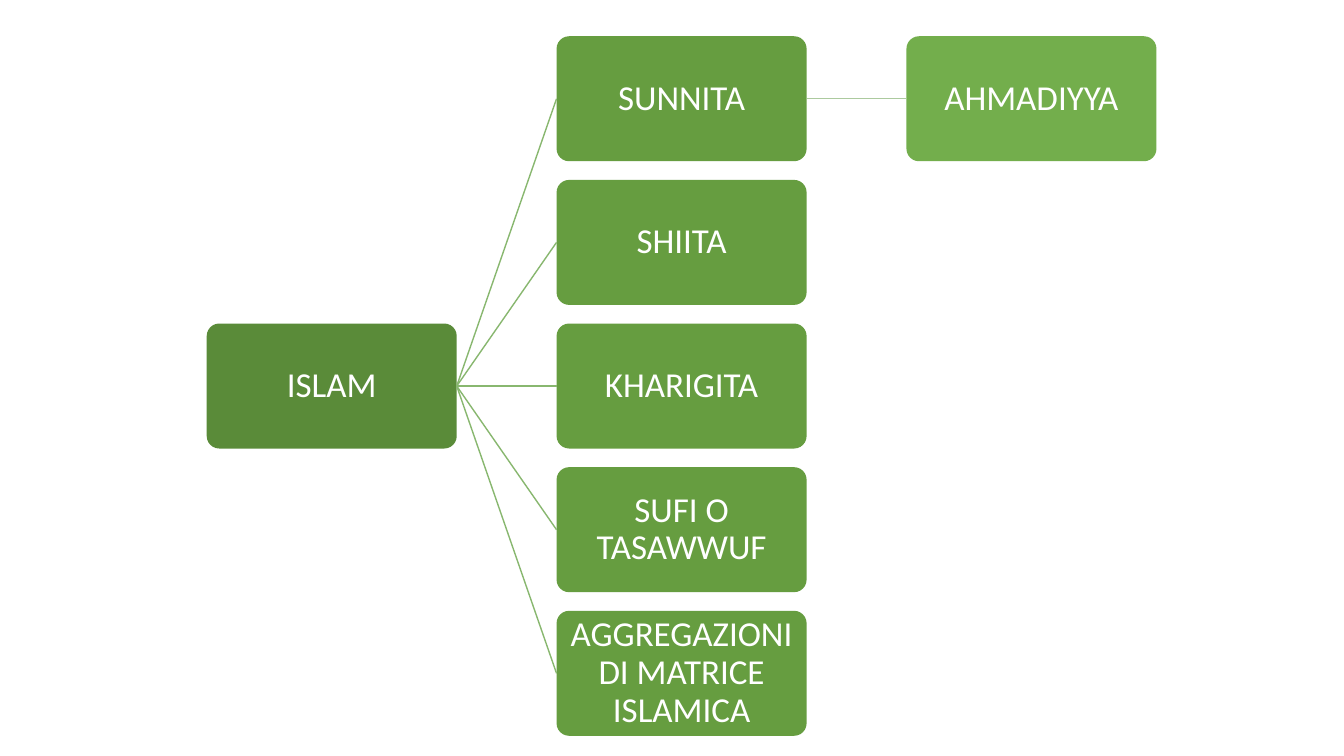
from dataclasses import dataclass

from pptx import Presentation
from pptx.dml.color import RGBColor
from pptx.enum.shapes import MSO_CONNECTOR, MSO_SHAPE
from pptx.enum.text import MSO_ANCHOR, PP_ALIGN
from pptx.oxml.ns import qn
from pptx.util import Inches, Pt

ROUNDED = MSO_SHAPE.ROUNDED_RECTANGLE
STRAIGHT = MSO_CONNECTOR.STRAIGHT
MIDDLE = MSO_ANCHOR.MIDDLE
CENTER = PP_ALIGN.CENTER
LEFT_SIDE, RIGHT_SIDE = 1, 3


@dataclass(frozen=True)
class Theme:
    font: str = "Calibri"
    text_size: int = 25
    text_color: str = "FFFFFF"
    level_fills: tuple = ("5A8B39", "669D40", "73AE4C")
    link_colors: tuple = ("88B76F", "ACCA9F")  # links leaving levels 0 and 1
    link_width: int = 1


THEME = Theme()

# Tree grid: one column per level, five evenly spaced rows
BOX_WIDTH, BOX_HEIGHT = 2.48, 1.24
FIRST_LEFT, COLUMN_PITCH = 2.05, 3.47
FIRST_TOP, LAST_TOP = 0.36, 6.06
ROW_PITCH = (LAST_TOP - FIRST_TOP) / 4
TEXT_INSET = Inches(0.02)

# Name, level, row, parent
NODES = [
    ("ISLAM", 0, 2, None),
    ("SUNNITA", 1, 0, "ISLAM"),
    ("AHMADIYYA", 2, 0, "SUNNITA"),
    ("SHIITA", 1, 1, "ISLAM"),
    ("KHARIGITA", 1, 2, "ISLAM"),
    ("SUFI O TASAWWUF", 1, 3, "ISLAM"),
    ("AGGREGAZIONI DI MATRICE ISLAMICA", 1, 4, "ISLAM"),
]


def add_node(slide, name, level, row):
    shape = slide.shapes.add_shape(
        ROUNDED,
        Inches(FIRST_LEFT + level * COLUMN_PITCH),
        Inches(FIRST_TOP + row * ROW_PITCH),
        Inches(BOX_WIDTH),
        Inches(BOX_HEIGHT),
    )
    shape.adjustments[0] = 0.1
    shape.shadow.inherit = False
    shape.fill.solid()
    shape.fill.fore_color.rgb = RGBColor.from_string(THEME.level_fills[level])
    shape.line.fill.background()

    frame = shape.text_frame
    frame.word_wrap = True
    frame.vertical_anchor = MIDDLE
    frame.margin_left = frame.margin_right = TEXT_INSET
    frame.margin_top = frame.margin_bottom = TEXT_INSET
    paragraph = frame.paragraphs[0]
    paragraph.text = name
    paragraph.alignment = CENTER
    paragraph.line_spacing = 0.9
    paragraph.font.name = THEME.font
    paragraph.font.size = Pt(THEME.text_size)
    paragraph.font.color.rgb = RGBColor.from_string(THEME.text_color)
    return shape


def add_link(slide, parent, child, color):
    connector = slide.shapes.add_connector(STRAIGHT, 0, 0, 0, 0)
    connector.begin_connect(parent, RIGHT_SIDE)
    connector.end_connect(child, LEFT_SIDE)
    connector.line.color.rgb = RGBColor.from_string(color)
    connector.line.width = Pt(THEME.link_width)
    properties = connector.element.spPr
    properties.append(properties.makeelement(qn("a:effectLst"), {}))


# Slide without a title
presentation = Presentation()
presentation.slide_width = Inches(13.33)
presentation.slide_height = Inches(7.5)
slide = presentation.slides.add_slide(presentation.slide_layouts[6])

# Boxes, each linked to its parent
boxes = {}
for name, level, row, parent in NODES:
    boxes[name] = add_node(slide, name, level, row)
    if parent:
        add_link(slide, boxes[parent], boxes[name], THEME.link_colors[level - 1])

presentation.save("out.pptx")
